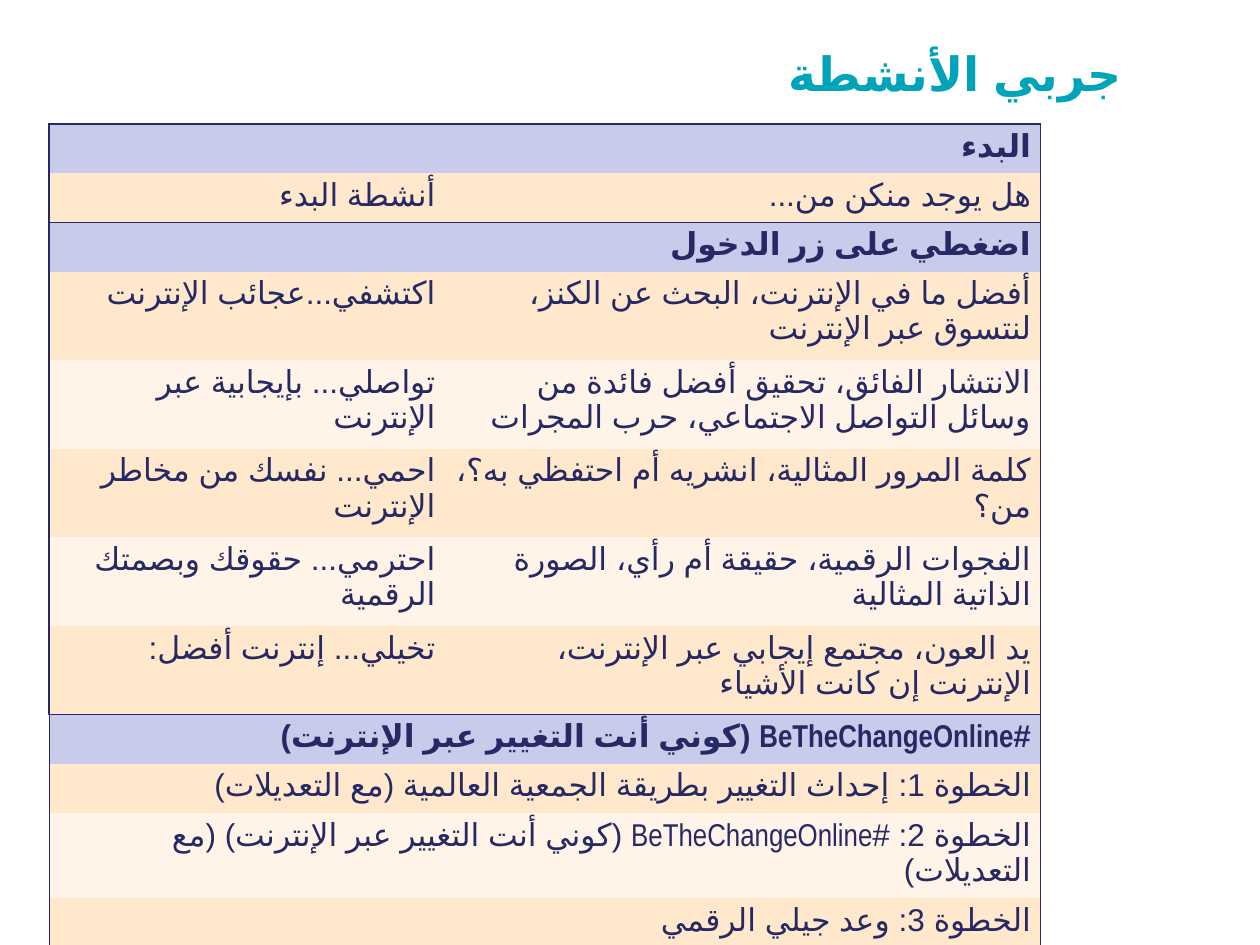
"""Builds the slide that lists the activities to try, group by group."""
from lxml import etree
from pptx import Presentation
from pptx.dml.color import RGBColor
from pptx.enum.text import MSO_ANCHOR, PP_ALIGN
from pptx.oxml.ns import qn
from pptx.util import Emu, Pt

RIGHT = PP_ALIGN.RIGHT
MIDDLE = MSO_ANCHOR.MIDDLE
PX = 9525
PLAIN = "{2D5ABB26-0587-4C30-8999-92F81FD0307C}"
COLORS = {"title": "00A4BA", "ink": "262963", "head": "C9CBEA",
          "odd": "FFE8CC", "even": "FFF4E7"}
TITLE = "جربي الأنشطة "
GROUPS = [
    {"head": "البدء", "line": 1.5, "high": 50, "rows": [
        ("أنشطة البدء", "هل يوجد منكن من...")]},
    {"head": "اضغطي على زر الدخول", "line": 1.5, "high": 90, "rows": [
        ("اكتشفي...عجائب الإنترنت",
         "أفضل ما في الإنترنت، البحث عن الكنز، لنتسوق عبر الإنترنت"),
        ("تواصلي... بإيجابية عبر الإنترنت",
         "الانتشار الفائق، تحقيق أفضل فائدة من وسائل التواصل الاجتماعي، حرب المجرات"),
        ("احمي... نفسك من مخاطر الإنترنت",
         "كلمة المرور المثالية، انشريه أم احتفظي به؟، من؟"),
        ("احترمي... حقوقك وبصمتك الرقمية",
         "الفجوات الرقمية، حقيقة أم رأي، الصورة الذاتية المثالية"),
        ("تخيلي... إنترنت أفضل:",
         "يد العون، مجتمع إيجابي عبر الإنترنت، الإنترنت إن كانت الأشياء")]},
    {"head": "#BeTheChangeOnline (كوني أنت التغيير عبر الإنترنت)",
     "line": 1, "high": 50, "rows": [
         ("الخطوة 1: إحداث التغيير بطريقة الجمعية العالمية (مع التعديلات)",),
         ("الخطوة 2: #BeTheChangeOnline (كوني أنت التغيير عبر الإنترنت) (مع التعديلات)",),
         ("الخطوة 3: وعد جيلي الرقمي",)]},
]
LEFT, TOP, HEAD = 50, 126, 50
COLS = (402, 605)


def px(num):
    return Emu(num * PX)


def write(frame, text, size=24, face="Arial Narrow", color="ink", bold=False, space=None):
    para = frame.paragraphs[0]
    para.alignment = RIGHT
    para.line_spacing = space
    para._p.get_or_add_pPr().set("rtl", "1")
    run = para.add_run()
    run.text = text
    font = run.font
    font.size, font.name, font.bold = Pt(size), face, bold
    font.color.rgb = RGBColor.from_string(COLORS[color])
    props = run._r.get_or_add_rPr()
    props.set("lang", "ar-SA")
    etree.SubElement(props, qn("a:cs")).set("typeface", "Arial")


def edge(cell, sides):
    props = cell._tc.get_or_add_tcPr()
    for spot, side in enumerate("LRTB"):
        line = etree.Element(qn("a:ln" + side))
        if side in sides:
            line.set("w", str(Pt(sides[side])))
            fill = etree.SubElement(line, qn("a:solidFill"))
            etree.SubElement(fill, qn("a:srgbClr"), val=COLORS["ink"])
        else:
            etree.SubElement(line, qn("a:noFill"))
        props.insert(spot, line)


def fill_row(grid, row, texts, tone, line, ends):
    cells = [grid.cell(row, col) for col in range(len(COLS))]
    if len(texts) == 1:
        cells[0].merge(cells[-1])
    for col, cell in enumerate(cells):
        cell.fill.solid()
        cell.fill.fore_color.rgb = RGBColor.from_string(COLORS[tone])
        sides = dict(ends)
        if col == 0:
            sides["L"] = line
        if col == len(COLS) - 1 or len(texts) == 1:
            sides["R"] = line
        edge(cell, sides)
    for cell, text in zip(cells, texts):
        write(cell.text_frame, text, bold=tone == "head")


def add_title(slide):
    box = slide.shapes.add_textbox(px(50), px(52), px(1090), px(50))
    frame = box.text_frame
    frame.word_wrap = True
    frame.vertical_anchor = MIDDLE
    frame.margin_left = frame.margin_right = frame.margin_top = frame.margin_bottom = 0
    write(frame, TITLE, size=36, face="Arial", color="title", bold=True, space=0.9)


def add_grid(slide):
    highs = [high for group in GROUPS
             for high in [HEAD] + [group["high"]] * len(group["rows"])]
    frame = slide.shapes.add_table(len(highs), len(COLS), px(LEFT), px(TOP),
                                   px(sum(COLS)), px(sum(highs)))
    grid = frame.table
    grid.first_row = grid.horz_banding = False
    grid._tbl.tblPr.find(qn("a:tableStyleId")).text = PLAIN
    for col, wide in zip(grid.columns, COLS):
        col.width = px(wide)
    for row, high in zip(grid.rows, highs):
        row.height = px(high)
    row = 0
    for group in GROUPS:
        line = group["line"]
        fill_row(grid, row, (group["head"],), "head", line, {"T": 1.5})
        for spot, texts in enumerate(group["rows"], 1):
            ends = {"B": line} if spot == len(group["rows"]) else {}
            fill_row(grid, row + spot, texts, "odd" if spot % 2 else "even", line, ends)
        row += 1 + len(group["rows"])


def main():
    deck = Presentation()
    deck.slide_width, deck.slide_height = px(1280), px(960)
    slide = deck.slides.add_slide(deck.slide_layouts[6])
    add_title(slide)
    add_grid(slide)
    deck.save("out.pptx")


if __name__ == "__main__":
    main()
